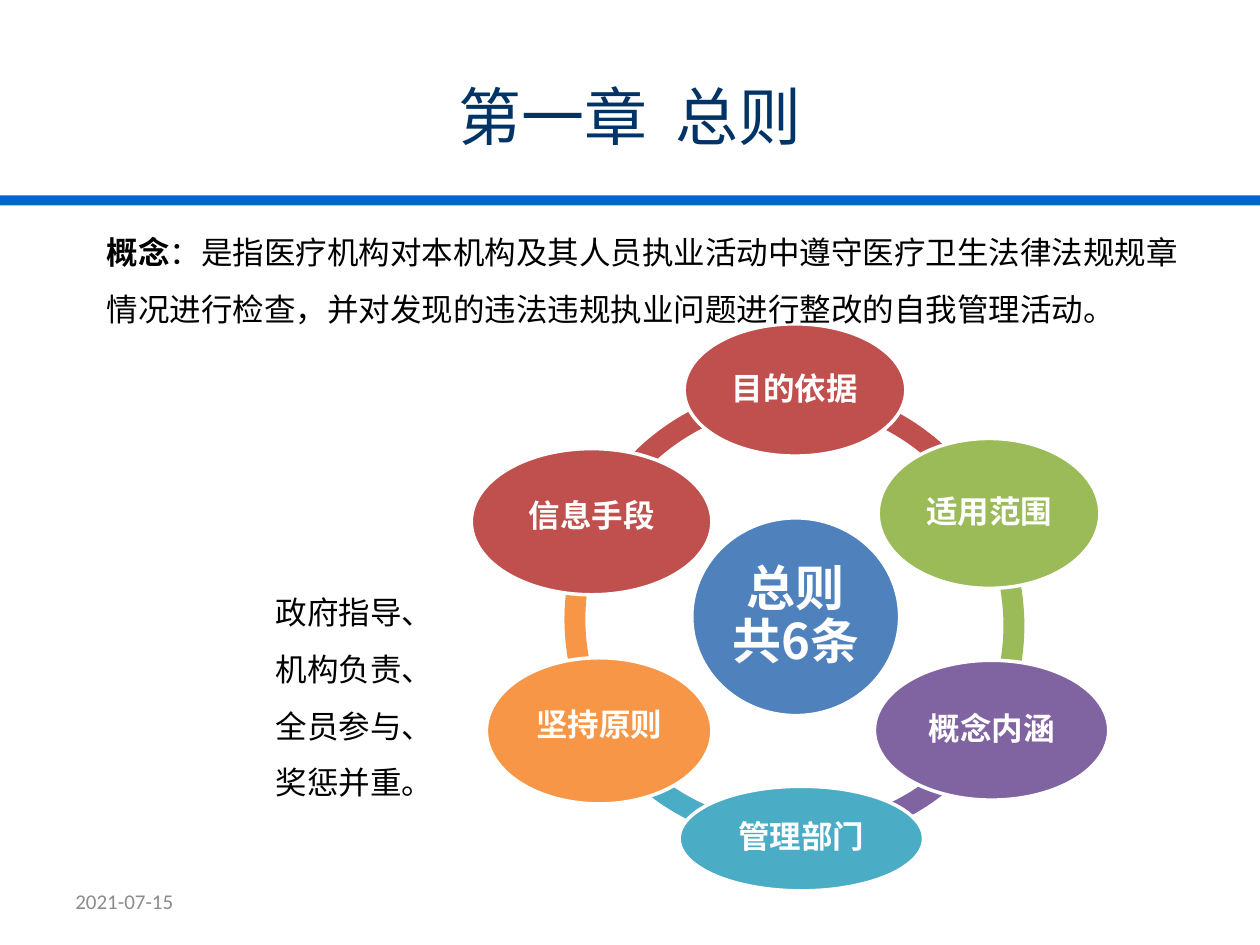
from lxml.etree import SubElement
from pptx import Presentation
from pptx.dml.color import RGBColor
from pptx.enum.shapes import MSO_SHAPE
from pptx.enum.text import MSO_ANCHOR, PP_ALIGN
from pptx.oxml.ns import qn
from pptx.util import Inches, Pt

COLORS = {
    "red": "C0504D", "orange": "F79646", "teal": "4BACC6", "purple": "8064A2",
    "green": "9BBB59", "blue": "4F81BD", "white": "FFFFFF", "black": "000000",
    "grey": "8C8C8C", "navy": "003366", "rule": "0066CC",
}
HAN = "Noto Sans CJK SC"

# All boxes are left, top, width, height in percent of the slide.
TITLE = ("第一章  总则", (0, 7.6, 100, 9.47))
RULE_BOX = (0, 20.67, 100, 1.07)
CONCEPT = (
    [("概念", True),
     ("：是指医疗机构对本机构及其人员执业活动中遵守医疗卫生法律法规规章"
      "情况进行检查，并对发现的违法违规执业问题进行整改的自我管理活动。", False)],
    (7.5, 22, 87.4, 13.47),
)
PRINCIPLES = ("政府指导、机构负责、全员参与、奖惩并重。", (20.9, 60.13, 14.2, 24.93))
DATE = ("2021-07-15", (5, 92.67, 23.3, 5.33))

ARC_SIZE = (36.9, 49.2)
ARCS = [
    ("red", (44.9, 40.67), 204.86, 269.45),
    ("orange", (44.8, 40.93), 150.61, 205.44),
    ("teal", (44.4, 40.13), 87.51, 148.38),
    ("purple", (45, 40.13), 31.68, 89.2),
    ("green", (44.4, 41.6), 330.66, 27.72),
    ("red", (44, 40.67), 272.19, 332.97),
]
ARC_THICKNESS = 0.045

HUB = (["总则", "共6条"], "blue", (54.9, 54.8, 16.5, 20.93))
TOPICS = [
    ("目的依据", "red", (54.3, 34.27, 17.6, 14), 0.9),
    ("适用范围", "green", (69.7, 46.4, 17.6, 15.87), 0.9),
    ("概念内涵", "purple", (69.4, 69.87, 18.6, 14.8), 0.9),
    ("管理部门", "teal", (53.9, 83.2, 19.4, 11.07), 0.9),
    ("坚持原则", "orange", (38.6, 69.6, 17.9, 15.47), 0.5),
    ("信息手段", "red", (37.4, 47.47, 19.1, 15.47), 0.5),
]

deck = Presentation()
deck.slide_width, deck.slide_height = Inches(10), Inches(7.5)
slide = deck.slides.add_slide(deck.slide_layouts[6])


def place(box):
    spans = (deck.slide_width, deck.slide_height) * 2
    return [round(share * span / 100) for share, span in zip(box, spans)]


def color(name):
    return RGBColor.from_string(COLORS[name])


def write(holder, paragraphs, size=18, font=HAN, ink="black", bold=False,
          align=PP_ALIGN.LEFT, anchor=MSO_ANCHOR.TOP, spacing=1.0, inset=None):
    frame = holder.text_frame
    frame.word_wrap = True
    frame.vertical_anchor = anchor
    if inset is not None:
        frame.margin_left = frame.margin_right = Inches(inset)
        frame.margin_top = frame.margin_bottom = Inches(inset)
    for index, pieces in enumerate(paragraphs):
        paragraph = frame.add_paragraph() if index else frame.paragraphs[0]
        paragraph.alignment = align
        paragraph.line_spacing = spacing
        for words, strong in [(pieces, bold)] if isinstance(pieces, str) else pieces:
            run = paragraph.add_run()
            run.text = words
            run.font.size = Pt(size)
            run.font.bold = strong
            run.font.color.rgb = color(ink)
            run.font.name = font
            SubElement(run.font._element, qn("a:ea"), typeface=font)


def draw(preset, box, fill, outline=None):
    shape = slide.shapes.add_shape(preset, *place(box))
    shape.shadow.inherit = False
    shape.fill.solid()
    shape.fill.fore_color.rgb = color(fill)
    if outline:
        shape.line.color.rgb = color(outline)
        shape.line.width = Pt(2)
    else:
        shape.line.fill.background()
    return shape


def textbox(paragraphs, box, **text_format):
    write(slide.shapes.add_textbox(*place(box)), paragraphs, **text_format)


def bubble(paragraphs, fill, box, **text_format):
    write(draw(MSO_SHAPE.OVAL, box, fill, "white"), paragraphs, ink="white", bold=True,
          align=PP_ALIGN.CENTER, anchor=MSO_ANCHOR.MIDDLE, **text_format)


for fill, corner, start, end in ARCS:
    arc = draw(MSO_SHAPE.BLOCK_ARC, corner + ARC_SIZE, fill)
    for index, value in enumerate((start * 0.6, end * 0.6, ARC_THICKNESS)):
        arc.adjustments[index] = value

bubble(*HUB, size=28, spacing=0.9, inset=0.04)
for topic, fill, box, spacing in TOPICS:
    bubble([topic], fill, box, spacing=spacing, inset=0.02)

date, date_box = DATE
textbox([date], date_box, size=12, font="Calibri", ink="grey", anchor=MSO_ANCHOR.MIDDLE)
title, title_box = TITLE
textbox([title], title_box, size=36, ink="navy", align=PP_ALIGN.CENTER)
draw(MSO_SHAPE.RECTANGLE, RULE_BOX, "rule")
concept, concept_box = CONCEPT
textbox([concept], concept_box, spacing=1.5)
principles, principles_box = PRINCIPLES
textbox([principles], principles_box, spacing=1.5)

deck.save("out.pptx")
